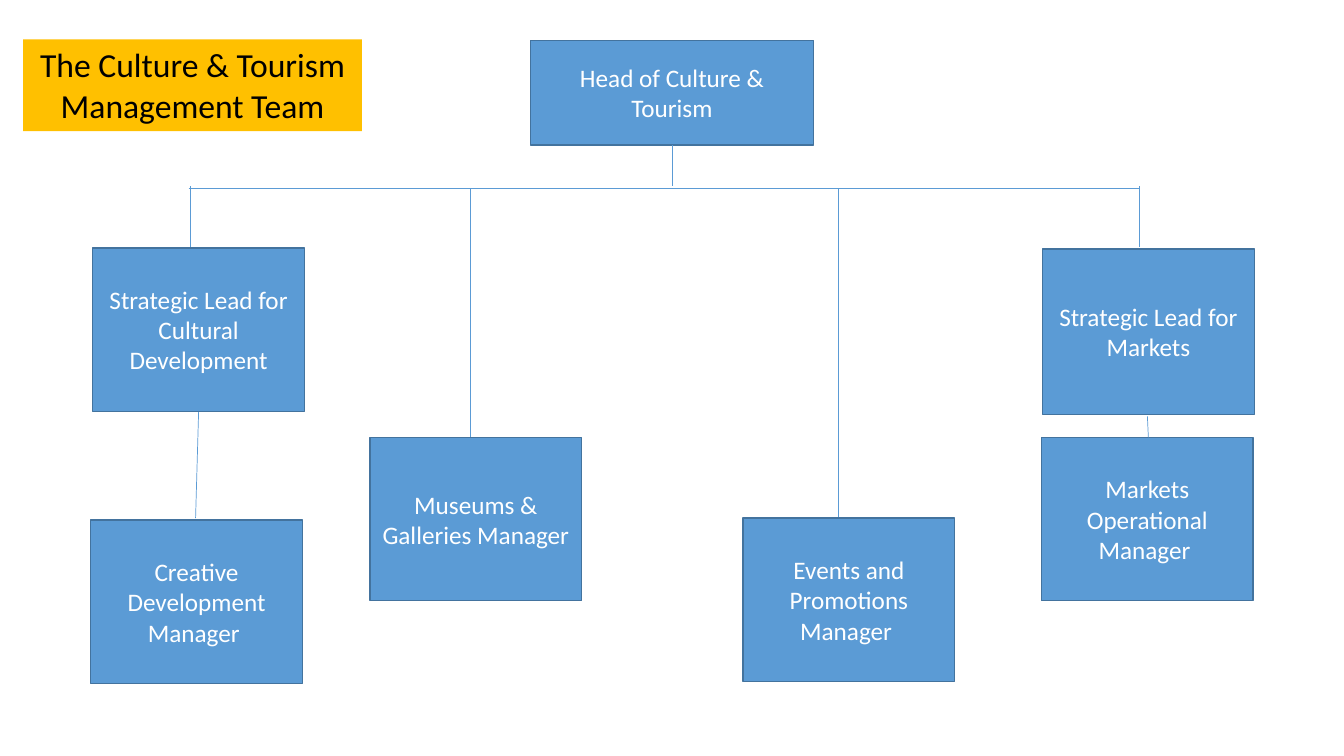
from pptx import Presentation
from pptx.dml.color import RGBColor
from pptx.enum.shapes import MSO_CONNECTOR, MSO_SHAPE
from pptx.enum.text import MSO_ANCHOR, PP_ALIGN
from pptx.oxml.ns import qn
from pptx.util import Inches, Pt
from lxml import etree

RECTANGLE = MSO_SHAPE.RECTANGLE
STRAIGHT = MSO_CONNECTOR.STRAIGHT
MIDDLE, TOP = MSO_ANCHOR.MIDDLE, MSO_ANCHOR.TOP
CENTER = PP_ALIGN.CENTER

BLUE = RGBColor(0x5B, 0x9B, 0xD5)
DARK_BLUE = RGBColor(0x43, 0x73, 0x9E)
GOLD = RGBColor(0xFF, 0xC0, 0x00)
WHITE = RGBColor(0xFF, 0xFF, 0xFF)
BLACK = RGBColor(0x00, 0x00, 0x00)

ROLE_WIDTH, ROLE_HEIGHT = 2.1, 1.62
RAIL_Y = 1.87
RAIL_LEFT, RAIL_RIGHT = 1.87, 11.3

# Role, left, top, height
ROLES = [
    ("Strategic Lead for Cultural Development", 0.92, 2.46, ROLE_HEIGHT),
    ("Museums & Galleries Manager ", 3.67, 4.34, ROLE_HEIGHT),
    ("Strategic Lead for Markets", 10.34, 2.47, 1.64),
    ("Events and Promotions Manager ", 7.37, 5.14, ROLE_HEIGHT),
    ("Creative Development Manager ", 0.9, 5.16, ROLE_HEIGHT),
    ("Markets Operational Manager ", 10.33, 4.34, ROLE_HEIGHT),
]

# Drops from the rail: x, top, bottom
DROPS = [
    (1.89, 1.85, 2.45),
    (4.67, RAIL_Y, 4.34),
    (8.32, RAIL_Y, 5.16),
    (RAIL_RIGHT, 1.85, 2.45),
]

# Lines from each strategic lead to the manager below
REPORTS = [(1.97, 4.09, 1.94, 5.14), (11.38, 4.13, 11.39, 4.34)]


def add_box(slide, text, box, fill, color, size, anchor=MIDDLE, outline=None):
    shape = slide.shapes.add_shape(RECTANGLE, *map(Inches, box))
    shape.shadow.inherit = False
    shape.fill.solid()
    shape.fill.fore_color.rgb = fill
    if outline is None:
        shape.line.fill.background()
    else:
        shape.line.color.rgb = outline
        shape.line.width = Pt(1)
    frame = shape.text_frame
    frame.word_wrap = True
    frame.vertical_anchor = anchor
    frame.text = text
    para = frame.paragraphs[0]
    para.alignment = CENTER
    font = para.runs[0].font
    font.name = "Calibri"
    font.size = Pt(size)
    font.color.rgb = color


def add_role(slide, text, box):
    add_box(slide, text, box, BLUE, WHITE, 18, outline=DARK_BLUE)


def add_line(slide, *ends):
    line = slide.shapes.add_connector(STRAIGHT, *map(Inches, ends))
    line.line.color.rgb = BLUE
    line.line.width = Pt(0.5)
    properties = line._element.find(qn("p:spPr"))
    etree.SubElement(properties, qn("a:effectLst"))


def add_title(slide, box):
    add_box(slide, "The Culture & Tourism Management Team", box,
            GOLD, BLACK, 24, anchor=TOP)


def add_head(slide, box):
    """Place the head of the team and the stem down to the rail."""
    left, top, width, height = box
    add_role(slide, "Head of Culture & Tourism", box)
    center = left + width / 2
    add_line(slide, center, top + height, center, 1.85)


def add_team(slide):
    """Place the rail, its drops, the roles and the reporting lines."""
    add_line(slide, RAIL_LEFT, RAIL_Y, RAIL_RIGHT, RAIL_Y)
    for x, top, bottom in DROPS:
        add_line(slide, x, top, x, bottom)
    for text, left, top, height in ROLES:
        add_role(slide, text, (left, top, ROLE_WIDTH, height))
    for ends in REPORTS:
        add_line(slide, *ends)


def main():
    deck = Presentation()
    deck.slide_width, deck.slide_height = Inches(13.33), Inches(7.5)
    slide = deck.slides.add_slide(deck.slide_layouts[6])
    add_head(slide, (5.26, 0.4, 2.81, 1.04))
    add_team(slide)
    add_title(slide, (0.23, 0.39, 3.36, 0.91))
    deck.save("out.pptx")


if __name__ == "__main__":
    main()
